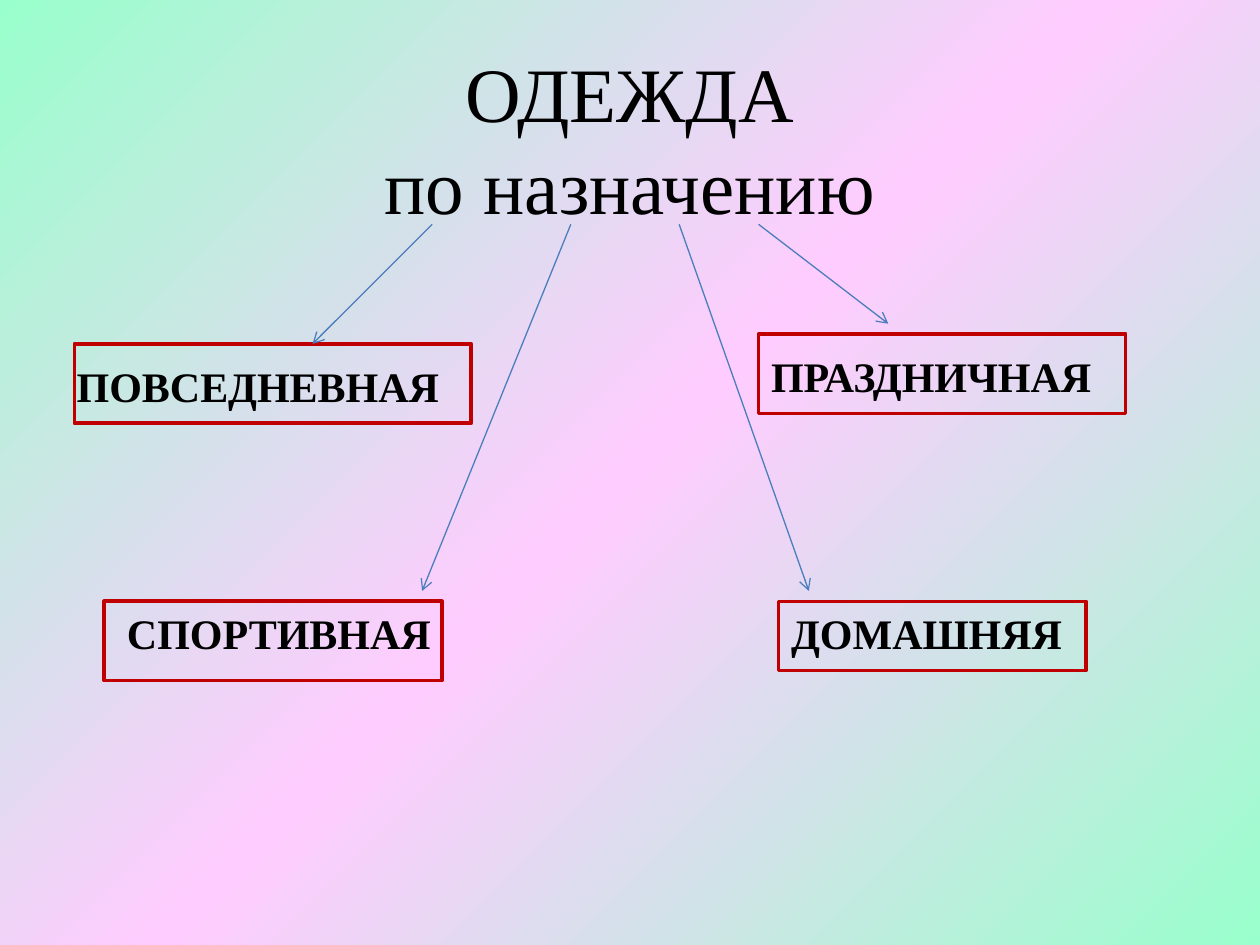
from copy import deepcopy
from dataclasses import dataclass

from lxml.etree import SubElement
from pptx import Presentation
from pptx.dml.color import RGBColor
from pptx.enum.shapes import MSO_CONNECTOR, MSO_SHAPE
from pptx.enum.text import MSO_ANCHOR, MSO_AUTO_SIZE, PP_ALIGN
from pptx.oxml.ns import qn
from pptx.util import Pt


@dataclass(frozen=True)
class Theme:
    font: str = "Times New Roman"
    ink: RGBColor = RGBColor(0x00, 0x00, 0x00)
    frame: RGBColor = RGBColor(0xC0, 0x00, 0x00)
    arrow: RGBColor = RGBColor(0x4B, 0x7E, 0xBC)
    mint: RGBColor = RGBColor(0x99, 0xFF, 0xCC)
    pink: RGBColor = RGBColor(0xFF, 0xCC, 0xFF)
    title_size: int = 44
    label_size: int = 24
    frame_width: float = 2
    arrow_width: float = 0.75


THEME = Theme()
TITLE_BOX = (54, 20.9, 612, 115.9)
ARROW_TOP = 128.2
LABEL_HEIGHT = 36.35

CATEGORIES = [
    dict(text="ПОВСЕДНЕВНАЯ", box=(42.5, 196.5, 226.8, 45.4),
         inset=(-5.8, 5.8), width=238.3, wrap=True),
    dict(text="ПРАЗДНИЧНАЯ", box=(433.5, 190.8, 209.8, 45.4),
         inset=(0, 5.8), width=205.2, wrap=False),
    dict(text="СПОРТИВНАЯ", box=(59.5, 343.6, 193, 45.4),
         inset=(6, 0), width=198.7, wrap=True),
    dict(text="ДОМАШНЯЯ", box=(445, 343.6, 175.7, 39.6),
         inset=(0, 0), width=170.6, wrap=False),
]
ARROWS = [
    (247, 178.6, 196.5),
    (326.2, 241.2, 337.7),
    (388.1, 462.2, 337.7),
    (433.5, 507.6, 185),
]


def put_text(tf, text, size=THEME.label_size, bold=False,
             align=PP_ALIGN.LEFT, anchor=MSO_ANCHOR.TOP, wrap=True,
             auto_size=MSO_AUTO_SIZE.NONE):
    tf.word_wrap = wrap
    tf.auto_size = auto_size
    tf.vertical_anchor = anchor
    p = tf.paragraphs[0]
    p.text = text
    p.alignment = align
    for r in p.runs:
        r.font.name = THEME.font
        r.font.size = Pt(size)
        r.font.bold = bold
        r.font.color.rgb = THEME.ink


def paint_background(s):
    fill = s.background.fill
    fill.gradient()
    fill.gradient_angle = 315
    stops = s.element.find(".//" + qn("a:gsLst"))
    stops.insert(1, deepcopy(stops[0]))
    colors = (THEME.mint, THEME.pink, THEME.mint)
    for i, (stop, color) in enumerate(zip(fill.gradient_stops, colors)):
        stop.position = i / 2
        stop.color.rgb = color


def add_title(s, box):
    title = s.shapes.title
    title.left, title.top, title.width, title.height = map(Pt, box)
    put_text(title.text_frame, "ОДЕЖДА\vпо назначению", size=THEME.title_size,
             align=PP_ALIGN.CENTER, anchor=MSO_ANCHOR.MIDDLE)


def add_category(s, box, text, inset, width, wrap):
    frame = s.shapes.add_shape(MSO_SHAPE.RECTANGLE, *map(Pt, box))
    frame.shadow.inherit = False
    frame.fill.background()
    frame.line.color.rgb = THEME.frame
    frame.line.width = Pt(THEME.frame_width)

    left, top = box[0] + inset[0], box[1] + inset[1]
    label = s.shapes.add_textbox(Pt(left), Pt(top), Pt(width), Pt(LABEL_HEIGHT))
    put_text(label.text_frame, text, bold=True, wrap=wrap,
             auto_size=MSO_AUTO_SIZE.SHAPE_TO_FIT_TEXT)


def add_arrow(s, x1, y1, x2, y2):
    arrow = s.shapes.add_connector(MSO_CONNECTOR.STRAIGHT, *map(Pt, (x1, y1, x2, y2)))
    arrow.line.color.rgb = THEME.arrow
    arrow.line.width = Pt(THEME.arrow_width)
    SubElement(arrow.line._get_or_add_ln(), qn("a:tailEnd"), type="arrow")
    SubElement(arrow.element.spPr, qn("a:effectLst"))


def main():
    prs = Presentation()
    prs.slide_width, prs.slide_height = Pt(720), Pt(540)
    s = prs.slides.add_slide(prs.slide_layouts[5])
    paint_background(s)
    add_title(s, TITLE_BOX)
    for category in CATEGORIES:
        add_category(s, **category)
    for x1, x2, y2 in ARROWS:
        add_arrow(s, x1, ARROW_TOP, x2, y2)
    prs.save("out.pptx")


if __name__ == "__main__":
    main()
